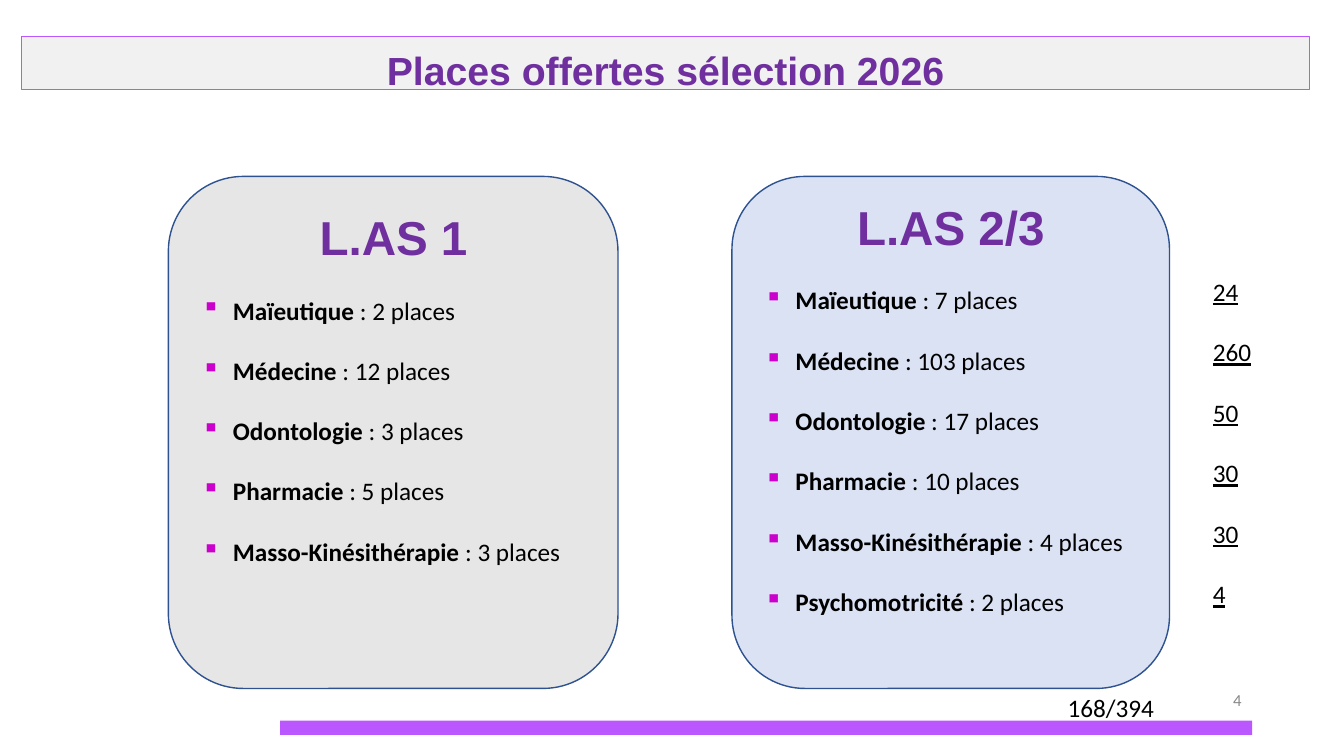
from lxml.etree import SubElement
from pptx import Presentation
from pptx.dml.color import RGBColor
from pptx.enum.shapes import MSO_SHAPE
from pptx.enum.text import MSO_ANCHOR, PP_ALIGN
from pptx.oxml.ns import qn
from pptx.util import Inches, Pt


def rgb(value):
    return RGBColor.from_string(value)


class SlideBuilder:
    """Draws styled elements on one slide."""

    PURPLE, VIOLET, BULLET = "6F2F9F", "BB57FF", "CC00CC"
    TEXT, MUTED, OUTLINE = "000000", "888888", "2E528F"
    HEAD_FONT, BODY_FONT = "Arial", "Calibri"

    def __init__(self, slide):
        self.s = slide

    def shape(self, kind, box, fill, line=None, width=1):
        sp = self.s.shapes.add_shape(kind, *map(Inches, box))
        sp.shadow.inherit = False
        sp.fill.solid()
        sp.fill.fore_color.rgb = rgb(fill)
        if line:
            sp.line.color.rgb = rgb(line)
            sp.line.width = Pt(width)
        else:
            sp.line.fill.background()
        return sp

    def frame(self, sp, insets, wrap=True):
        tf = sp.text_frame
        tf.word_wrap = wrap
        tf.vertical_anchor = MSO_ANCHOR.TOP
        tf.margin_left, tf.margin_top, tf.margin_right, tf.margin_bottom = map(Inches, insets)
        return tf

    def text_box(self, box, insets=(0.1, 0.05, 0.1, 0.05), wrap=True):
        return self.frame(self.s.shapes.add_textbox(*map(Inches, box)), insets, wrap)

    def run(self, p, text, size=18, color=TEXT, font=BODY_FONT, bold=False, underline=False):
        r = p.add_run()
        r.text = text
        r.font.size, r.font.name = Pt(size), font
        r.font.bold, r.font.underline = bold, underline
        r.font.color.rgb = rgb(color)

    def heading(self, p, text, size):
        self.run(p, text, size, self.PURPLE, self.HEAD_FONT, bold=True)

    def title(self, text, box):
        sp = self.shape(MSO_SHAPE.RECTANGLE, box, "F1F1F1", self.VIOLET, 0.75)
        p = self.frame(sp, (0, 0.1, 0, 0)).paragraphs[0]
        p.alignment = PP_ALIGN.CENTER
        self.heading(p, text, 28)

    def bullet(self, p):
        pPr = p._p.get_or_add_pPr()
        pPr.set("marL", str(Inches(0.33)))
        pPr.set("indent", str(Inches(-0.31)))
        SubElement(SubElement(pPr, qn("a:buClr")), qn("a:srgbClr"), val=self.BULLET)
        SubElement(pPr, qn("a:buChar"), char="▪")

    def card(self, box, fill, text_at, indent, heading, places):
        self.shape(MSO_SHAPE.ROUNDED_RECTANGLE, box, fill, self.OUTLINE)
        tf = self.text_box((*text_at, 3.58, 0.6 + 0.61 * len(places)), (0, 0.03, 0, 0))
        p = tf.paragraphs[0]
        p._p.get_or_add_pPr().set("marL", str(Inches(indent)))
        self.heading(p, heading, 34)
        for name, count in places:
            p = tf.add_paragraph()
            p.space_before = Pt(21.5)
            self.bullet(p)
            self.run(p, f"{name} ", bold=True)
            self.run(p, f": {count} places")

    def totals(self, box, values):
        tf = self.text_box(box, wrap=False)
        for i, value in enumerate(values):
            p = tf.add_paragraph() if i else tf.paragraphs[0]
            if i:
                p.space_before = Pt(21.6)
            self.run(p, value, underline=True)

    def label(self, text, box, insets=(0.1, 0.05, 0.1, 0.05), **style):
        self.run(self.text_box(box, insets, wrap=False).paragraphs[0], text, **style)


def main():
    prs = Presentation()
    prs.slide_width, prs.slide_height = Inches(13.33), Inches(7.5)
    b = SlideBuilder(prs.slides.add_slide(prs.slide_layouts[6]))
    b.shape(MSO_SHAPE.RECTANGLE, (2.78, 7.15, 9.64, 0.14), b.VIOLET)
    b.title("Places offertes sélection 2026", (0.21, 0.36, 12.78, 0.53))
    b.label("4", (12.22, 6.82, 0.11, 0.23), (0.01, 0.02, 0, 0), size=12, color=b.MUTED)

    subjects = ["Maïeutique", "Médecine", "Odontologie", "Pharmacie",
                "Masso-Kinésithérapie", "Psychomotricité"]
    b.card((1.67, 1.75, 4.46, 5.08), "E7E6E6", (1.98, 2.03), 1.19, "L.AS 1",
           list(zip(subjects, [2, 12, 3, 5, 3])))
    b.card((7.26, 1.75, 4.34, 5.08), "DAE2F3", (7.56, 1.93), 0.94, "L.AS 2/3",
           list(zip(subjects, [7, 103, 17, 10, 4, 2])))
    b.totals((11.93, 2.69, 0.62, 3.43), ["24", "260", "50", "30", "30", "4"])
    b.label("168/394", (10.49, 6.82, 1.11, 0.4))
    prs.save("out.pptx")


if __name__ == "__main__":
    main()
